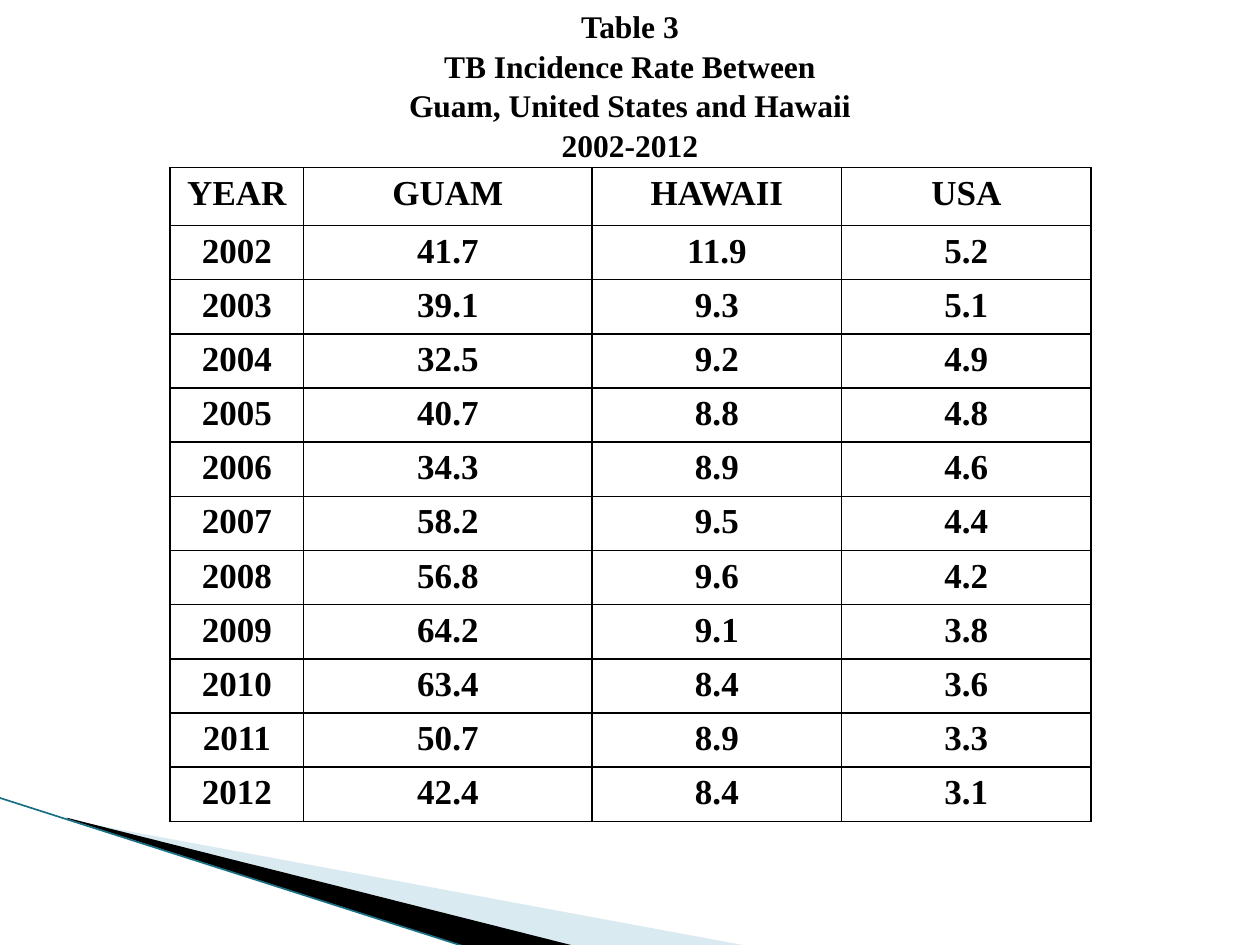
from dataclasses import dataclass

from lxml import etree
from pptx import Presentation
from pptx.dml.color import RGBColor
from pptx.enum.shapes import MSO_CONNECTOR
from pptx.enum.text import MSO_ANCHOR, PP_ALIGN
from pptx.oxml.ns import qn
from pptx.util import Inches, Pt

CENTER = PP_ALIGN.CENTER
MIDDLE = MSO_ANCHOR.MIDDLE
STRAIGHT = MSO_CONNECTOR.STRAIGHT
FONT = "Times New Roman"
BLACK = "000000"
PALE_BLUE = "A0CBDC"
TEAL = "197084"


@dataclass
class Wedge:
    points: list[tuple[float, float]]
    color: str
    opacity: int = 100


WEDGES = [
    Wedge([(0.55, 6.51), (5.95, 7.51), (4.56, 7.51), (0.55, 6.5)], PALE_BLUE, 40),
    Wedge([(0.53, 6.49), (4.57, 7.51), (3.72, 7.52), (0.54, 6.5)], BLACK),
]
TITLE_LINES = [
    "Table 3",
    "TB Incidence Rate Between",
    "Guam, United States and Hawaii",
    "2002-2012",
]
HEADER = ("YEAR", "GUAM", "HAWAII", "USA")
RATES = [
    ("2002", "41.7", "11.9", "5.2"),
    ("2003", "39.1", "9.3", "5.1"),
    ("2004", "32.5", "9.2", "4.9"),
    ("2005", "40.7", "8.8", "4.8"),
    ("2006", "34.3", "8.9", "4.6"),
    ("2007", "58.2", "9.5", "4.4"),
    ("2008", "56.8", "9.6", "4.2"),
    ("2009", "64.2", "9.1", "3.8"),
    ("2010", "63.4", "8.4", "3.6"),
    ("2011", "50.7", "8.9", "3.3"),
    ("2012", "42.4", "8.4", "3.1"),
]
COLUMN_WIDTHS = (1.06, 2.29, 1.98, 1.98)
HEADER_HEIGHT, ROW_HEIGHT = 0.46, 0.43


def rgb(color: str) -> RGBColor:
    return RGBColor.from_string(color)


def write(para, text: str, size: int) -> None:
    """Add one centred bold run to a paragraph."""
    para.alignment = CENTER
    span = para.add_run()
    span.text = text
    span.font.name = FONT
    span.font.size = Pt(size)
    span.font.bold = True
    span.font.color.rgb = rgb(BLACK)


def draw_wedge(page, wedge: Wedge) -> None:
    corners = [(Inches(x), Inches(y)) for x, y in wedge.points]
    builder = page.shapes.build_freeform(*corners[0], scale=1.0)
    builder.add_line_segments(corners[1:], close=True)
    shape = builder.convert_to_shape()
    shape.shadow.inherit = False
    shape.fill.solid()
    shape.fill.fore_color.rgb = rgb(wedge.color)
    shape.line.fill.background()
    if wedge.opacity < 100:
        fill_color = shape.fill._xPr.find(qn("a:solidFill"))[0]
        etree.SubElement(fill_color, qn("a:alpha"), val=str(wedge.opacity * 1000))


def draw_edge(page) -> None:
    """Draw the thin line along the lower side of the wedges."""
    edge = page.shapes.add_connector(
        STRAIGHT, Inches(-0.01), Inches(6.33), Inches(3.71), Inches(7.52))
    edge.line.color.rgb = rgb(TEAL)
    edge.line.width = Pt(0.95)
    etree.SubElement(edge._element.spPr, qn("a:effectLst"))


def add_borders(cell, color: str, width: float) -> None:
    properties = cell._tc.get_or_add_tcPr()
    for place, side in enumerate(("a:lnL", "a:lnR", "a:lnT", "a:lnB")):
        border = etree.Element(qn(side), w=str(Pt(width)))
        fill = etree.SubElement(border, qn("a:solidFill"))
        etree.SubElement(fill, qn("a:srgbClr"), val=color)
        properties.insert(place, border)


def fill_cell(cell, text: str) -> None:
    cell.fill.background()
    add_borders(cell, BLACK, 1)
    para = cell.text_frame.paragraphs[0]
    indent = para._p.get_or_add_pPr()
    indent.set("marL", str(Inches(0.38)))
    indent.set("indent", str(Inches(-0.38)))
    write(para, text, 20)


def draw_rates(page) -> None:
    rows = [HEADER, *RATES]
    height = HEADER_HEIGHT + ROW_HEIGHT * len(RATES)
    table = page.shapes.add_table(
        len(rows), len(HEADER), Inches(1.35), Inches(1.33),
        Inches(sum(COLUMN_WIDTHS)), Inches(height)).table
    table.first_row = False
    table.horz_banding = False
    for column, width in zip(table.columns, COLUMN_WIDTHS):
        column.width = Inches(width)
    for index, values in enumerate(rows):
        table.rows[index].height = Inches(ROW_HEIGHT if index else HEADER_HEIGHT)
        for cell, text in zip(table.rows[index].cells, values):
            fill_cell(cell, text)


def set_title(page) -> None:
    title = page.shapes.title
    title.left, title.top = Inches(0), Inches(0.02)
    title.width, title.height = Inches(10), Inches(1.3)
    frame = title.text_frame
    frame.word_wrap = True
    frame.vertical_anchor = MIDDLE
    for index, line in enumerate(TITLE_LINES):
        para = frame.add_paragraph() if index else frame.paragraphs[0]
        para.line_spacing = 1.05
        write(para, line, 18)


def main() -> None:
    deck = Presentation()
    deck.slide_width, deck.slide_height = Inches(10), Inches(7.5)
    page = deck.slides.add_slide(deck.slide_layouts[5])

    # Corner decoration
    for wedge in WEDGES:
        draw_wedge(page, wedge)
    draw_edge(page)

    # Heading and incidence rates
    set_title(page)
    draw_rates(page)

    deck.save("out.pptx")


if __name__ == "__main__":
    main()
